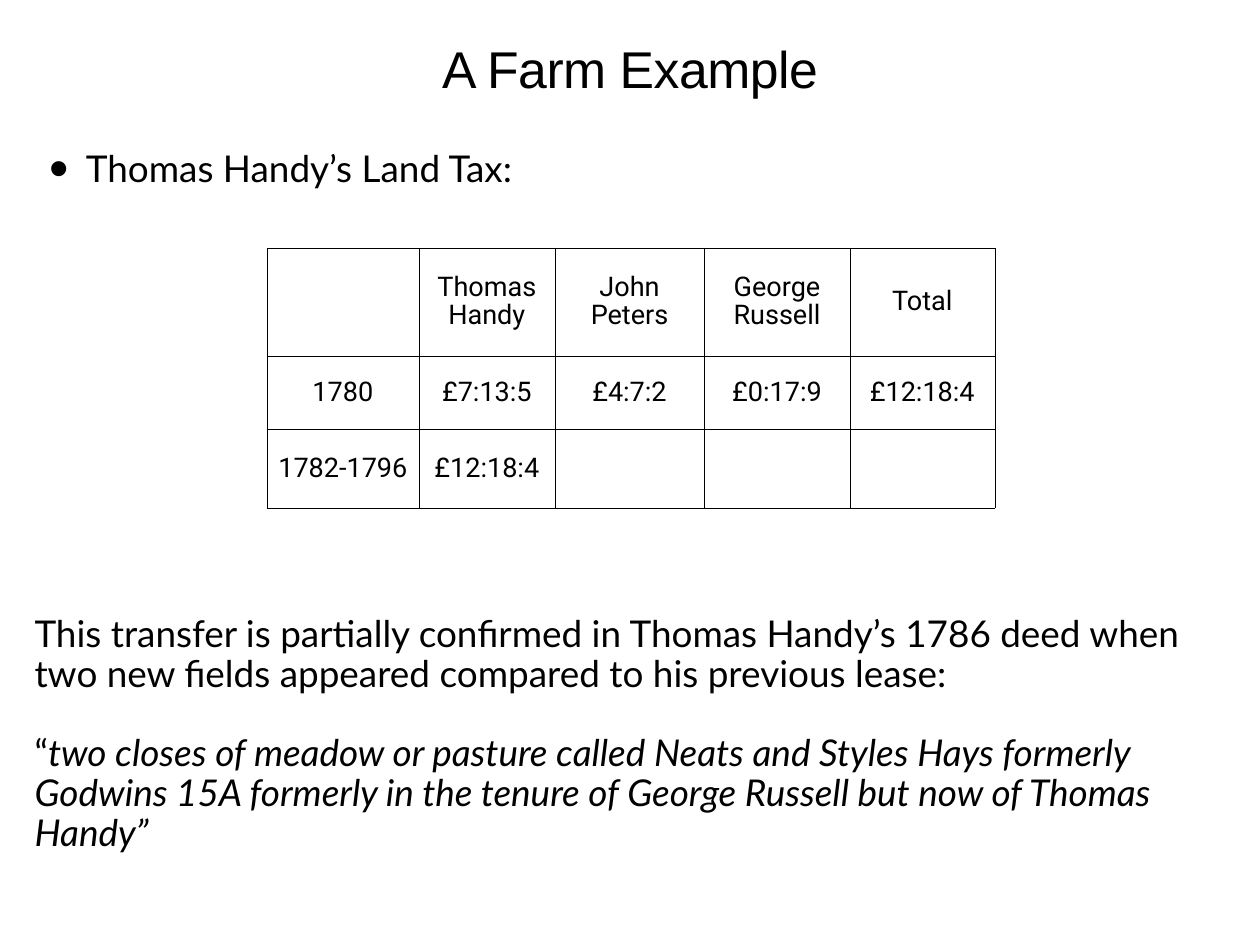
from dataclasses import dataclass

from pptx import Presentation
from pptx.dml.color import RGBColor
from pptx.enum.text import MSO_ANCHOR, MSO_AUTO_SIZE, PP_ALIGN
from pptx.oxml import parse_xml
from pptx.oxml.ns import nsdecls
from pptx.util import Inches, Pt


@dataclass(frozen=True)
class Theme:
    ink: str = "000000"
    title_font: str = "Arial"
    body_font: str = "Lato"
    table_font: str = "Roboto"
    title_size: int = 42
    body_size: int = 30
    table_size: int = 22
    border_width: float = 0.25


class SlideBuilder:
    def __init__(self, slide, theme):
        self.s = slide
        self.theme = theme

    def format_runs(self, p, font, size):
        for r in p.runs:
            r.font.name = font
            r.font.size = Pt(size)
            r.font.color.rgb = RGBColor.from_string(self.theme.ink)

    def set_frame(self, sp, box, anchor):
        sp.left, sp.top, sp.width, sp.height = (Inches(v) for v in box)
        tf = sp.text_frame
        tf.margin_left = tf.margin_right = Inches(0.03)
        tf.margin_top = tf.margin_bottom = Inches(0.03)
        tf.word_wrap = True
        tf.auto_size = MSO_AUTO_SIZE.NONE
        tf.vertical_anchor = anchor
        return tf

    def title(self, text, box):
        tf = self.set_frame(self.s.shapes.title, box, MSO_ANCHOR.TOP)
        tf.text = text
        p = tf.paragraphs[0]
        p.alignment = PP_ALIGN.CENTER
        p.line_spacing = 0.8
        self.format_runs(p, self.theme.title_font, self.theme.title_size)
        for r in p.runs:
            r.font._element.set("spc", "-40")

    def bullet(self, text, box):
        tf = self.set_frame(self.s.placeholders[1], box, MSO_ANCHOR.TOP)
        tf.text = text
        p = tf.paragraphs[0]
        p.alignment = PP_ALIGN.LEFT
        p.line_spacing = 0.9
        p.space_before = Pt(17)
        self.format_runs(p, self.theme.body_font, self.theme.body_size)
        pPr = p._p.get_or_add_pPr()
        pPr.set("marL", str(Inches(0.41)))
        pPr.set("indent", str(-Inches(0.41)))
        pPr.append(parse_xml(f'<a:buSzPct {nsdecls("a")} val="150000"/>'))
        pPr.append(parse_xml(f'<a:buChar {nsdecls("a")} char="•"/>'))

    def border(self, cell):
        tcPr = cell._tc.get_or_add_tcPr()
        for i, side in enumerate(("lnL", "lnR", "lnT", "lnB")):
            tcPr.insert(i, parse_xml(
                f'<a:{side} {nsdecls("a")} w="{Pt(self.theme.border_width)}">'
                f'<a:solidFill><a:srgbClr val="{self.theme.ink}"/></a:solidFill>'
                f'</a:{side}>'))

    def table(self, rows, left, top, widths, heights):
        table = self.s.shapes.add_table(
            len(heights), len(widths), Inches(left), Inches(top),
            Inches(sum(widths)), Inches(sum(heights))).table
        table.first_row = table.horz_banding = False
        for column, width in zip(table.columns, widths):
            column.width = Inches(width)
        for row, height, texts in zip(table.rows, heights, rows):
            row.height = Inches(height)
            for cell, text in zip(row.cells, texts):
                cell.fill.background()
                self.border(cell)
                cell.margin_left = cell.margin_right = Inches(0.06)
                cell.margin_top = cell.margin_bottom = Inches(0.06)
                cell.vertical_anchor = MSO_ANCHOR.MIDDLE
                cell.text = text
                p = cell.text_frame.paragraphs[0]
                p.alignment = PP_ALIGN.CENTER
                p.line_spacing = 0.9
                self.format_runs(p, self.theme.table_font, self.theme.table_size)

    def quotation(self, lead, quote, box):
        """Lead sentence, then a quotation in italics after an upright opening mark."""
        sp = self.s.shapes.add_textbox(*(Inches(v) for v in box))
        tf = self.set_frame(sp, box, MSO_ANCHOR.MIDDLE)
        tf.text = lead
        p = tf.add_paragraph()
        p.space_before = Pt(32.4)
        p.add_run().text = "“"
        r = p.add_run()
        r.text = quote
        r.font.italic = True
        for p in tf.paragraphs:
            p.line_spacing = 0.9
            self.format_runs(p, self.theme.body_font, self.theme.body_size)


LAND_TAX = [
    ["", "Thomas Handy", "John Peters", "George Russell", "Total"],
    ["1780", "£7:13:5", "£4:7:2", "£0:17:9", "£12:18:4"],
    ["1782-1796", "£12:18:4", "", "", ""],
]


def main():
    prs = Presentation()
    prs.slide_width, prs.slide_height = Inches(14.22), Inches(10.67)
    s = prs.slides.add_slide(prs.slide_layouts[1])
    builder = SlideBuilder(s, Theme())
    builder.title("A Farm Example", (0.71, 0.52, 12.8, 1.01))
    builder.bullet("Thomas Handy’s Land Tax:", (0.53, 1.67, 12.8, 8.54))
    builder.table(LAND_TAX, 3.01, 2.8,
                  widths=(1.72, 1.53, 1.69, 1.64, 1.64),
                  heights=(1.22, 0.83, 0.89))
    builder.quotation(
        "This transfer is partially confirmed in Thomas Handy’s 1786 deed when "
        "two new fields appeared compared to his previous lease:",
        "two closes of meadow or pasture called Neats and Styles Hays formerly "
        "Godwins 15A formerly in the tenure of George Russell but now of Thomas "
        "Handy”",
        (0.36, 6.27, 13.51, 4.06))
    prs.save("out.pptx")


if __name__ == "__main__":
    main()
